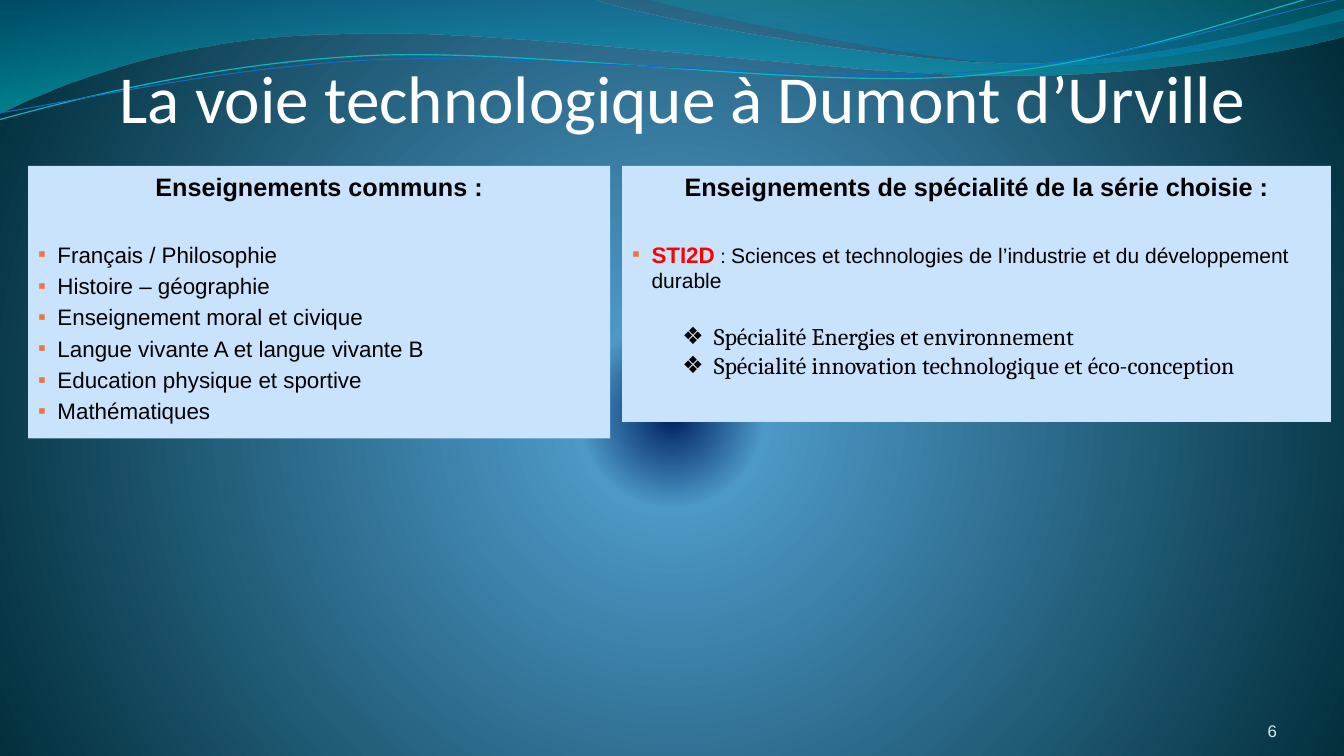
import pptx
import pptx.util
import pptx.dml.color
import pptx.enum.shapes
import pptx.enum.text
import pptx.oxml
import pptx.oxml.ns

Cm, Pt = pptx.util.Cm, pptx.util.Pt
RGB = pptx.dml.color.RGBColor
ALIGN = pptx.enum.text.PP_ALIGN
ANCHOR = pptx.enum.text.MSO_ANCHOR
qn = pptx.oxml.ns.qn

WHITE, BLACK, RED = RGB(255, 255, 255), RGB(0, 0, 0), RGB(255, 0, 0)
PANEL = RGB(0xC8, 0xE3, 0xFB)
PALE = RGB(0xD1, 0xEA, 0xEE)
ORANGE = RGB(0xEE, 0x74, 0x44)
NAVY, SKY, DEEP = RGB(0, 0x20, 0x60), RGB(0x4C, 0x98, 0xC7), RGB(0, 0x2C, 0x38)
BLUE, AQUA = RGB(0, 0x74, 0xA1), RGB(0, 0xC6, 0xCF)
TEAL, AZURE = RGB(0, 0xA1, 0xA9), RGB(0, 0x8B, 0xBF)
CYAN, COBALT = RGB(0x0A, 0xB8, 0xBF), RGB(0x0F, 0x6F, 0xC6)

# Paths in cm: two numbers are a straight step, six a cubic curve.
BROAD = [(-0.03, 0), (14.91, -0.03), (16.1, 0.43, 22.48, 1.6, 25.68, 1.6),
         (28.91, 1.6, 32.46, 0.66, 33.86, 0.23), (33.91, 0.91),
         (33.3, 1.12, 29.46, 1.93, 25.25, 1.91),
         (21.06, 1.91, 12.93, 0.71, 8.71, 0.86),
         (4.37, 0.91, 1.55, 2.11, -0.03, 2.87)]
SMALL = [(16.23, -0.03), (17.25, 0.28, 23.09, 1.57, 26.04, 1.65),
         (28.98, 1.75, 32.56, 0.81, 33.86, 0.53), (33.86, 0)]
UPPER = [(-0.03, 3.02), (1.63, 2.57, 5.36, 1.57, 9.37, 1.4),
         (13.39, 1.22, 20.07, 2.21, 24.13, 1.93),
         (28.19, 1.68, 31.8, 0.2, 33.81, -0.25)]
LOWER = [(0, 2.84), (1.6, 2.62, 5.54, 1.68, 9.6, 1.5),
         (13.64, 1.35, 20.22, 2.08, 24.26, 1.83),
         (28.32, 1.57, 31.88, 0.36, 33.88, -0.05)]

COMMON = ["Français / Philosophie", "Histoire – géographie",
          "Enseignement moral et civique",
          "Langue vivante A et langue vivante B",
          "Education physique et sportive", "Mathématiques"]
SERIES = [("STI2D", 16, RED, True), (" : ", 14, BLACK, False),
          ("Sciences et technologies de l’industrie et du développement durable",
           15, BLACK, False)]
OPTIONS = ["Spécialité Energies et environnement",
           "Spécialité innovation technologique et éco-conception"]


def node(xml):
    head, rest = xml.split(" ", 1)
    return pptx.oxml.parse_xml(f"{head} {pptx.oxml.ns.nsdecls('a')} {rest}")


def blend(owner, fill, stops, shade):
    """Fill owner with (percent, colour, opacity) stops, shaded as given."""
    fill.gradient()
    grad = owner.element.find(".//" + qn("a:gradFill"))
    for child in list(grad):
        grad.remove(child)
    marks = ""
    for pos, tone, alpha in stops:
        veil = f'<a:alpha val="{alpha * 1000}"/>' if alpha < 100 else ""
        marks += (f'<a:gs pos="{pos * 1000}"><a:srgbClr val="{tone}">'
                  f'{veil}</a:srgbClr></a:gs>')
    grad.append(node(f"<a:gsLst >{marks}</a:gsLst>"))
    grad.append(node(shade))


def curve(slide, steps, close):
    """Draw steps as a freeform, then bend its six-number steps."""
    ends = [(Cm(step[-2]), Cm(step[-1])) for step in steps]
    pen = slide.shapes.build_freeform(*ends[0], scale=1.0)
    pen.add_line_segments(ends[1:], close=close)
    shape = pen.convert_to_shape()
    shape.shadow.inherit = False
    lines = shape.element.findall(".//" + qn("a:lnTo"))
    for line, step in zip(lines, steps[1:]):
        if len(step) == 6:
            knots = "".join(
                f'<a:pt x="{Cm(x) - shape.left}" y="{Cm(y) - shape.top}"/>'
                for x, y in zip(step[::2], step[1::2]))
            line.getparent().replace(
                line, node(f"<a:cubicBezTo >{knots}</a:cubicBezTo>"))
    return shape


def waves(slide):
    for steps, stops in ((BROAD, [(0, BLUE, 45), (100, AQUA, 55)]),
                         (SMALL, [(0, TEAL, 30), (80, AZURE, 45)])):
        band = curve(slide, steps, True)
        band.line.fill.background()
        blend(band, band.fill, stops, '<a:lin ang="5400000" scaled="1"/>')
    for steps, tone, width in ((UPPER, CYAN, 0.85), (LOWER, COBALT, 0.75)):
        thread = curve(slide, steps, False)
        thread.fill.background()
        thread.line.color.rgb = tone
        thread.line.width = Pt(width)


def style(run, size, tone=BLACK, bold=False, face="Arial"):
    font = run.font
    font.size, font.bold, font.name = Pt(size), bold, face
    font.color.rgb = tone


def label(slide, box, text, size, tone, face, align, top=0):
    shape = slide.shapes.add_textbox(*map(Cm, box))
    frame = shape.text_frame
    frame.word_wrap = True
    frame.vertical_anchor = ANCHOR.BOTTOM
    frame.margin_left = frame.margin_right = frame.margin_bottom = 0
    frame.margin_top = Cm(top)
    frame.text = text
    para = frame.paragraphs[0]
    para.alignment = align
    style(para.runs[0], size, tone, face=face)


def bullet(para, sign, left, hang, before, tone):
    para.alignment = ALIGN.LEFT
    para.space_before = Pt(before)
    props = para._p.get_or_add_pPr()
    props.set("marL", str(Cm(left)))
    props.set("indent", str(-Cm(hang)))
    props.append(node(f'<a:buClr ><a:srgbClr val="{tone}"/></a:buClr>'))
    props.append(node('<a:buFont typeface="Arial"/>'))
    props.append(node(f'<a:buChar char="{sign}"/>'))


def panel(slide, box, title):
    shape = slide.shapes.add_shape(
        pptx.enum.shapes.MSO_SHAPE.RECTANGLE, *map(Cm, box))
    shape.shadow.inherit = False
    shape.fill.solid()
    shape.fill.fore_color.rgb = PANEL
    shape.line.fill.background()
    frame = shape.text_frame
    frame.word_wrap = True
    frame.vertical_anchor = ANCHOR.TOP
    frame.text = title
    para = frame.paragraphs[0]
    para.alignment = ALIGN.CENTER
    style(para.runs[0], 18, bold=True)
    return frame


def core(slide, box):
    frame = panel(slide, box, "Enseignements communs :")
    for i, text in enumerate(COMMON):
        para = frame.add_paragraph()
        para.text = text
        bullet(para, "▪", 0.49, 0.49, 3.2 if i else 28.3, ORANGE)
        style(para.runs[0], 16)


def major(slide, box):
    frame = panel(slide, box,
                  "Enseignements de spécialité de la série choisie :")
    para = frame.add_paragraph()
    bullet(para, "▪", 0.49, 0.49, 28.3, ORANGE)
    for text, size, tone, bold in SERIES:
        run = para.add_run()
        run.text = text
        style(run, size, tone, bold)
    for i, text in enumerate(OPTIONS):
        para = frame.add_paragraph()
        para.text = text
        bullet(para, "❖", 2.06, 0.79, 0 if i else 21, BLACK)
        style(para.runs[0], 17, face="Cambria")


def main():
    deck = pptx.Presentation()
    deck.slide_width, deck.slide_height = Cm(33.87), Cm(19.05)
    slide = deck.slides.add_slide(deck.slide_layouts[6])
    blend(slide, slide.background.fill,
          [(0, NAVY, 100), (12, SKY, 100), (100, DEEP, 100)],
          '<a:path path="circle"><a:fillToRect l="10000" t="110000" '
          'r="10000" b="100000"/></a:path>')
    waves(slide)
    label(slide, (0.94, 0.99, 32.54, 2.46),
          "La voie technologique à Dumont d’Urville",
          48, WHITE, "Calibri", ALIGN.CENTER, 0.13)
    label(slide, (29.36, 17.65, 2.82, 1.02), "6", 12, PALE, "Arial", ALIGN.RIGHT)
    core(slide, (0.71, 4.18, 14.67, 6.87))
    major(slide, (15.68, 4.18, 17.86, 6.45))
    deck.save("out.pptx")


if __name__ == "__main__":
    main()
